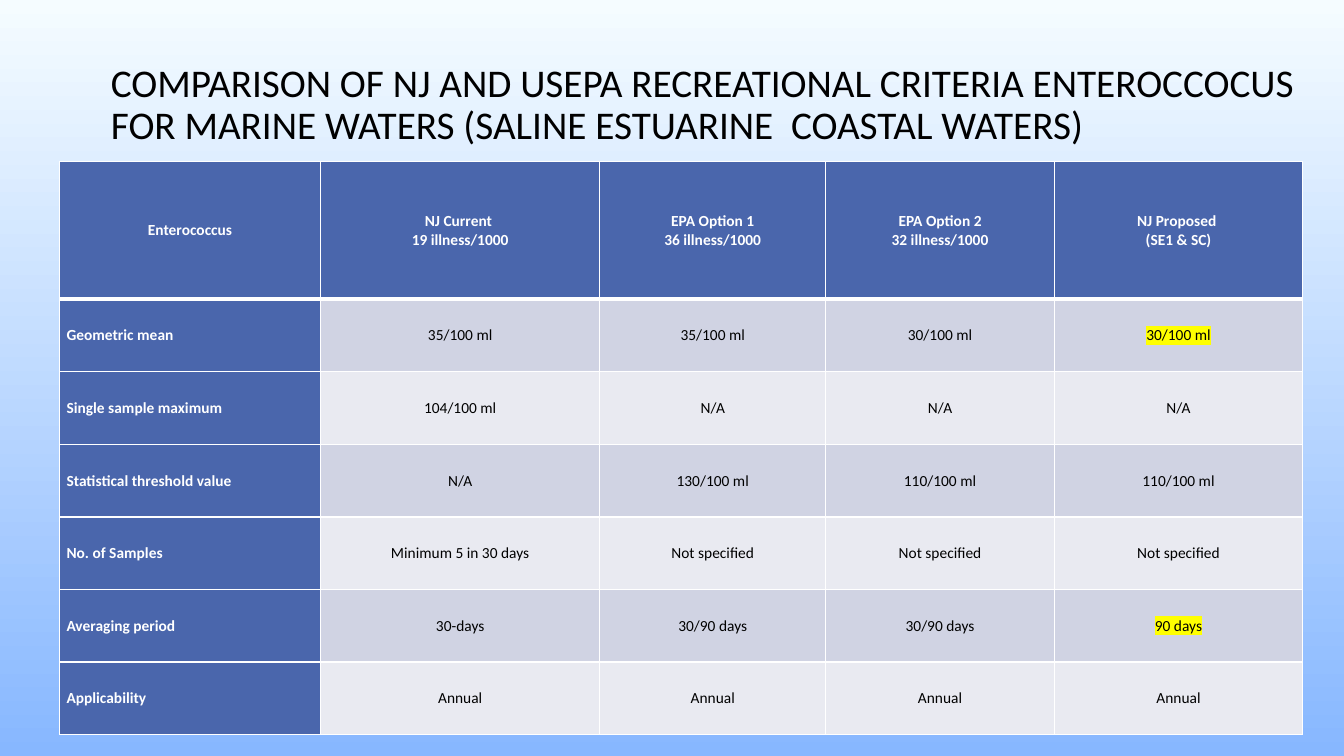
from lxml import etree
from pptx import Presentation
from pptx.dml.color import RGBColor
from pptx.enum.text import MSO_ANCHOR, MSO_AUTO_SIZE, PP_ALIGN
from pptx.oxml.ns import qn
from pptx.util import Inches, Pt

LEFT, CENTER = PP_ALIGN.LEFT, PP_ALIGN.CENTER
MIDDLE = MSO_ANCHOR.MIDDLE
NO_FIT = MSO_AUTO_SIZE.NONE

COLORS = {
    "sky_top": "F5FCFF",
    "sky_bottom": "87B7FF",
    "header": "4A66AC",
    "band_dark": "D0D3E3",
    "band_light": "E9EAF1",
    "white": "FFFFFF",
    "black": "000000",
    "highlight": "FFFF00",
}

TITLE = ("COMPARISON OF NJ AND USEPA RECREATIONAL CRITERIA ENTEROCCOCUS "
         "FOR MARINE WATERS (SALINE ESTUARINE  COASTAL WATERS)")
ROWS = [
    ["Enterococcus", "NJ Current \v19 illness/1000", "EPA Option 1\v36 illness/1000",
     "EPA Option 2\v32 illness/1000", "NJ Proposed \v(SE1 & SC)"],
    ["Geometric mean", "35/100 ml", "35/100 ml", "30/100 ml", "30/100 ml"],
    ["Single sample maximum", "104/100 ml", "N/A", "N/A", "N/A"],
    ["Statistical threshold value", "N/A", "130/100 ml", "110/100 ml", "110/100 ml"],
    ["No. of Samples", "Minimum 5 in 30 days", "Not specified", "Not specified", "Not specified"],
    ["Averaging period", "30-days", "30/90 days", "30/90 days", "90 days"],
    ["Applicability", "Annual", "Annual", "Annual", "Annual"],
]
COL_WIDTHS = [2.59, 2.77, 2.24, 2.27, 2.46]
ROW_HEIGHTS = [1.37] + [0.72] * 6
HIGHLIGHTED = {(1, 4), (5, 4)}


def write(tf, text, size, color, bold=False, align=LEFT, highlight=None):
    tf.text = text
    p = tf.paragraphs[0]
    p.alignment = align
    for r in p.runs:
        r.font.name = "Calibri"
        r.font.size = Pt(size)
        r.font.bold = bold
        r.font.color.rgb = RGBColor.from_string(COLORS[color])
        if highlight:
            mark = etree.Element(qn("a:highlight"))
            etree.SubElement(mark, qn("a:srgbClr"), val=COLORS[highlight])
            r.font._element.find(qn("a:solidFill")).addnext(mark)
    return p


def set_borders(cell, widths):
    tcPr = cell._tc.get_or_add_tcPr()
    for i, (side, width) in enumerate(widths.items()):
        ln = etree.Element(qn(f"a:ln{side}"), w=str(Pt(width)))
        fill = etree.SubElement(ln, qn("a:solidFill"))
        etree.SubElement(fill, qn("a:srgbClr"), val=COLORS["white"])
        tcPr.insert(i, ln)


prs = Presentation()
prs.slide_width, prs.slide_height = Inches(13.33), Inches(7.5)
s = prs.slides.add_slide(prs.slide_layouts[5])

bg = s.background.fill
bg.gradient()
bg.gradient_angle = 270
for stop, position, name in zip(bg.gradient_stops, (0, 1), ("sky_top", "sky_bottom")):
    stop.position = position
    stop.color.rgb = RGBColor.from_string(COLORS[name])

title = s.shapes.title
title.left, title.top = Inches(1), Inches(0.68)
title.width, title.height = Inches(12.33), Inches(1.16)
tf = title.text_frame
tf.word_wrap = True
tf.auto_size = NO_FIT
tf.vertical_anchor = MIDDLE
tf.margin_bottom = Inches(0.47)
p = write(tf, TITLE, 28, "black")
p.line_spacing = 0.9

table = s.shapes.add_table(len(ROWS), len(COL_WIDTHS), Inches(0.59), Inches(1.6),
                           Inches(sum(COL_WIDTHS)), Inches(sum(ROW_HEIGHTS))).table
for col, width in zip(table.columns, COL_WIDTHS):
    col.width = Inches(width)
for row, height in zip(table.rows, ROW_HEIGHTS):
    row.height = Inches(height)

for i, texts in enumerate(ROWS):
    for j, text in enumerate(texts):
        is_header = i == 0 or j == 0
        band = "band_dark" if i % 2 else "band_light"
        cell = table.cell(i, j)
        cell.vertical_anchor = MIDDLE
        cell.margin_left = cell.margin_right = Inches(0.07)
        cell.margin_top = cell.margin_bottom = 0
        cell.fill.solid()
        cell.fill.fore_color.rgb = RGBColor.from_string(COLORS["header" if is_header else band])
        set_borders(cell, {"L": 1, "R": 1, "T": 3 if i == 1 else 1, "B": 3 if i == 0 else 1})
        write(cell.text_frame, text, 11, "white" if is_header else "black", bold=is_header,
              align=LEFT if j == 0 and i > 0 else CENTER,
              highlight="highlight" if (i, j) in HIGHLIGHTED else None)

prs.save("out.pptx")
